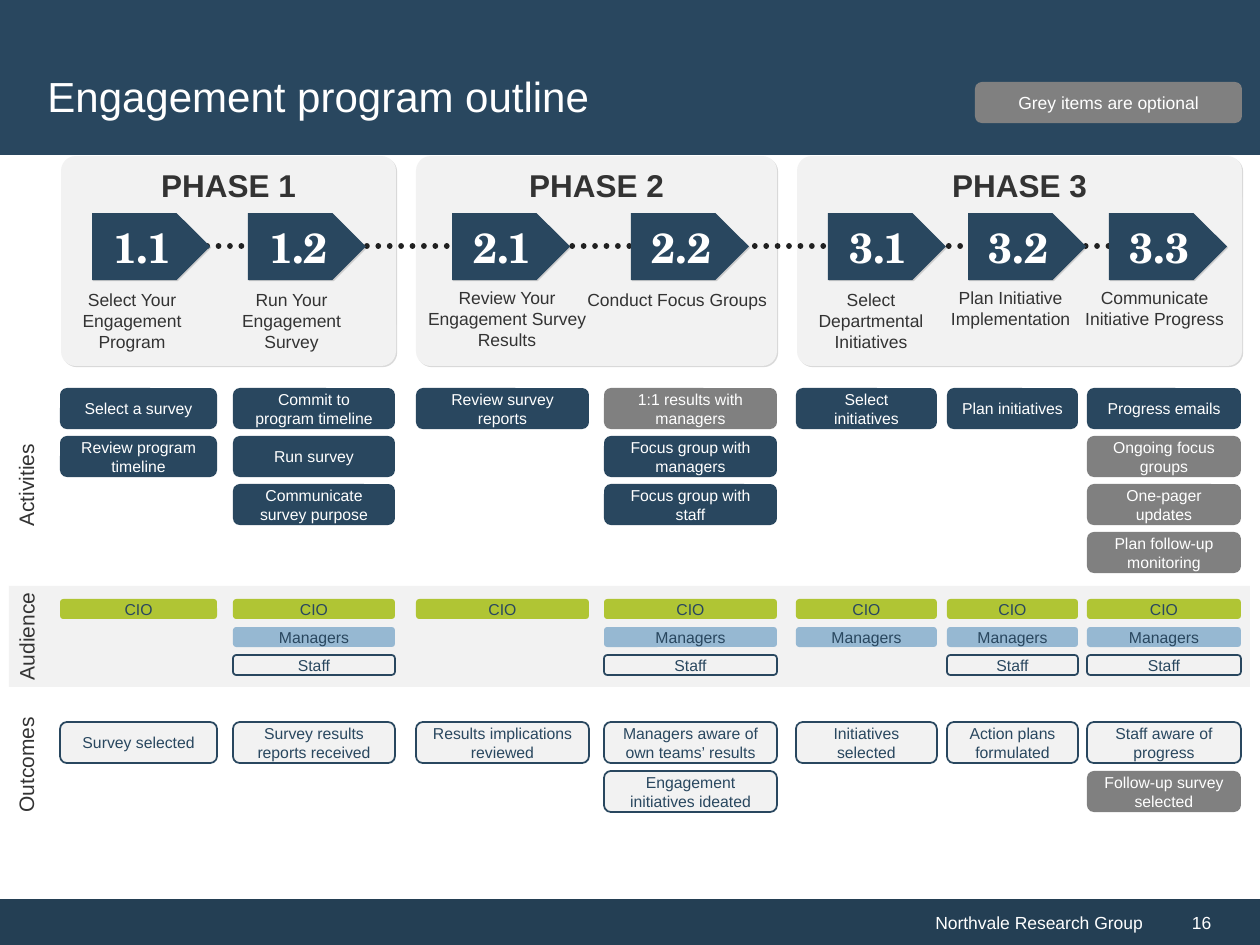
from dataclasses import dataclass
from typing import NamedTuple, Optional

from lxml.etree import SubElement
from pptx import Presentation
from pptx.dml.color import RGBColor
from pptx.enum.dml import MSO_LINE
from pptx.enum.shapes import MSO_CONNECTOR, MSO_SHAPE
from pptx.enum.text import MSO_ANCHOR, PP_ALIGN
from pptx.oxml.ns import qn
from pptx.util import Pt

EMU_PER_PX = 914400 / 126

NAVY = RGBColor(0x29, 0x47, 0x5F)
FOOTER_NAVY = RGBColor(0x24, 0x3F, 0x54)
PALE = RGBColor(0xF2, 0xF2, 0xF2)
GREY = RGBColor(0x80, 0x80, 0x80)
GREEN = RGBColor(0xB0, 0xC5, 0x34)
BLUE = RGBColor(0x96, 0xB8, 0xD2)
INK = RGBColor(0x33, 0x33, 0x33)
DOTS = RGBColor(0x21, 0x21, 0x21)
WHITE = RGBColor(0xFF, 0xFF, 0xFF)

BODY_FONT = "Arial"
NUMBER_FONT = "TeX Gyre Schola"


class Box(NamedTuple):
    left: int
    top: int
    width: int
    height: int


class Style(NamedTuple):
    fill: Optional[RGBColor]
    text: RGBColor
    outline: Optional[RGBColor] = None


class Type(NamedTuple):
    size: int
    bold: bool = False
    font: str = BODY_FONT
    align: PP_ALIGN = PP_ALIGN.CENTER
    anchor: MSO_ANCHOR = MSO_ANCHOR.MIDDLE


class Phase(NamedTuple):
    title: str
    left: int
    width: int


class Item(NamedTuple):
    text: str
    optional: bool = False


@dataclass
class Step:
    number: str
    arrow_left: int
    caption: str
    caption_box: Box
    left: int
    width: int
    activities: list[Item]
    audience_count: int
    outcomes: list[Item]


SOLID = Style(NAVY, WHITE)
OPTIONAL = Style(GREY, WHITE)
OUTCOME = Style(PALE, NAVY, NAVY)
AUDIENCES = [
    ("CIO", Style(GREEN, NAVY)),
    ("Managers", Style(BLUE, NAVY)),
    ("Staff", Style(None, NAVY, NAVY)),
]

PHASES = [Phase("PHASE 1", 61, 335), Phase("PHASE 2", 416, 361), Phase("PHASE 3", 797, 445)]

STEPS = [
    Step("1.1", 92, "Select Your Engagement Program", Box(57, 283, 150, 77), 60, 157,
         [Item("Select a survey"), Item("Review program timeline")], 1,
         [Item("Survey selected")]),
    Step("1.2", 248, "Run Your Engagement Survey", Box(205, 283, 173, 77), 233, 162,
         [Item("Commit to program timeline"), Item("Run survey"),
          Item("Communicate survey purpose")], 3,
         [Item("Survey results reports received")]),
    Step("2.1", 452, "Review Your Engagement Survey Results", Box(413, 281, 188, 77), 416, 173,
         [Item("Review survey reports")], 1,
         [Item("Results implications reviewed")]),
    Step("2.2", 631, "Conduct Focus Groups", Box(572, 283, 210, 34), 604, 173,
         [Item("1:1 results with managers", True), Item("Focus group with managers"),
          Item("Focus group with staff")], 3,
         [Item("Managers aware of own teams’ results"), Item("Engagement initiatives ideated")]),
    Step("3.1", 828, "Select Departmental Initiatives", Box(784, 283, 174, 77), 796, 141,
         [Item("Select initiatives")], 2,
         [Item("Initiatives selected")]),
    Step("3.2", 968, "Plan Initiative Implementation", Box(926, 281, 169, 55), 947, 131,
         [Item("Plan initiatives")], 3,
         [Item("Action plans formulated")]),
    Step("3.3", 1109, "Communicate Initiative Progress", Box(1070, 281, 169, 55), 1087, 154,
         [Item("Progress emails"), Item("Ongoing focus groups", True),
          Item("One-pager updates", True), Item("Plan follow-up monitoring", True)], 3,
         [Item("Staff aware of progress"), Item("Follow-up survey selected", True)]),
]


def px(length: int) -> int:
    return round(length * EMU_PER_PX)


def write(shape, text: str, kind: Type, color: RGBColor, wrap: bool = True) -> None:
    frame = shape.text_frame
    frame.word_wrap = wrap
    frame.vertical_anchor = kind.anchor
    frame.text = text
    paragraph = frame.paragraphs[0]
    paragraph.alignment = kind.align
    paragraph.font.size = Pt(kind.size)
    paragraph.font.bold = kind.bold
    paragraph.font.name = kind.font
    paragraph.font.color.rgb = color


def add_block(slide, preset, box: Box, style: Style, text: str = "", kind: Type = Type(9)):
    block = slide.shapes.add_shape(preset, *map(px, box))
    block.shadow.inherit = False
    if style.fill is None:
        block.fill.background()
    else:
        block.fill.solid()
        block.fill.fore_color.rgb = style.fill
    if style.outline is None:
        block.line.fill.background()
    else:
        block.line.color.rgb = style.outline
        block.line.width = Pt(1)
    if text:
        write(block, text, kind, style.text)
    return block


def add_label(slide, box: Box, text: str, kind: Type, color: RGBColor, wrap: bool = True):
    label = slide.shapes.add_textbox(*map(px, box))
    write(label, text, kind, color, wrap)
    return label


def add_shadow(block) -> None:
    effects = block._element.spPr.find(qn("a:effectLst"))
    shadow = SubElement(effects, qn("a:outerShdw"), dist=str(Pt(1)), dir="2700000", algn="tl")
    black = SubElement(shadow, qn("a:srgbClr"), val="000000")
    SubElement(black, qn("a:alpha"), val="14000")


def add_items(slide, step: Step, items: list[Item], top: int, pitch: int, style: Style) -> None:
    for row, item in enumerate(items):
        box = Box(step.left, top + row * pitch, step.width, 41)
        add_block(slide, MSO_SHAPE.ROUNDED_RECTANGLE, box,
                  OPTIONAL if item.optional else style, item.text)


def main() -> None:
    deck = Presentation()
    deck.slide_width, deck.slide_height = px(1260), px(945)
    slide = deck.slides.add_slide(deck.slide_layouts[6])

    # Footer, header and audience band
    footer = Style(FOOTER_NAVY, WHITE)
    add_block(slide, MSO_SHAPE.RECTANGLE, Box(0, 899, 1155, 46), footer,
              "Northvale Research Group", Type(10, align=PP_ALIGN.RIGHT))
    page = add_block(slide, MSO_SHAPE.RECTANGLE, Box(1155, 899, 105, 46), footer,
                     "16", Type(10, align=PP_ALIGN.LEFT))
    page.text_frame.margin_left = px(37)
    add_block(slide, MSO_SHAPE.RECTANGLE, Box(0, 0, 1260, 155), SOLID)
    add_block(slide, MSO_SHAPE.RECTANGLE, Box(9, 586, 1241, 101), Style(PALE, INK))
    add_label(slide, Box(35, 35, 1188, 121), "Engagement program outline",
              Type(24, align=PP_ALIGN.LEFT), WHITE)
    add_block(slide, MSO_SHAPE.ROUNDED_RECTANGLE, Box(975, 82, 267, 41), OPTIONAL,
              "Grey items are optional", Type(10))

    # Phase panels
    for phase in PHASES:
        panel = add_block(slide, MSO_SHAPE.ROUNDED_RECTANGLE,
                          Box(phase.left, 156, phase.width, 210), Style(PALE, INK),
                          phase.title, Type(18, bold=True, anchor=MSO_ANCHOR.TOP))
        panel.adjustments[0] = 0.07
        add_shadow(panel)

    # Dotted timeline behind the arrows
    timeline = slide.shapes.add_connector(MSO_CONNECTOR.STRAIGHT, px(1177), px(246), px(98), px(246))
    timeline.line.color.rgb = DOTS
    timeline.line.width = Pt(3.25)
    timeline.line.dash_style = MSO_LINE.ROUND_DOT
    timeline.line._get_or_add_ln().set("cap", "rnd")
    SubElement(timeline._element.spPr, qn("a:effectLst"))

    # Steps: arrow, caption, activities, audience, outcomes
    for step in STEPS:
        arrow = add_block(slide, MSO_SHAPE.PENTAGON, Box(step.arrow_left, 213, 118, 67), SOLID,
                          step.number, Type(24, bold=True, font=NUMBER_FONT))
        add_shadow(arrow)
        add_label(slide, step.caption_box, step.caption,
                  Type(10, anchor=MSO_ANCHOR.TOP), INK)
        add_items(slide, step, step.activities, 388, 48, SOLID)
        for row, (audience, style) in enumerate(AUDIENCES[:step.audience_count]):
            tag = add_block(slide, MSO_SHAPE.ROUNDED_RECTANGLE,
                            Box(step.left, 599 + row * 28, step.width, 20), style, audience)
            tag.text_frame.margin_top = tag.text_frame.margin_bottom = 0
        add_items(slide, step, step.outcomes, 722, 49, OUTCOME)

    # Row names, reading upwards
    for name, middle, width in [("Activities", 485, 108), ("Audience", 636, 113),
                                ("Outcomes", 764, 122)]:
        row_name = add_label(slide, Box(26 - width // 2, middle - 19, width, 38), name,
                             Type(12, align=PP_ALIGN.LEFT, anchor=MSO_ANCHOR.TOP), INK, wrap=False)
        row_name.rotation = 270

    deck.save("out.pptx")


if __name__ == "__main__":
    main()
